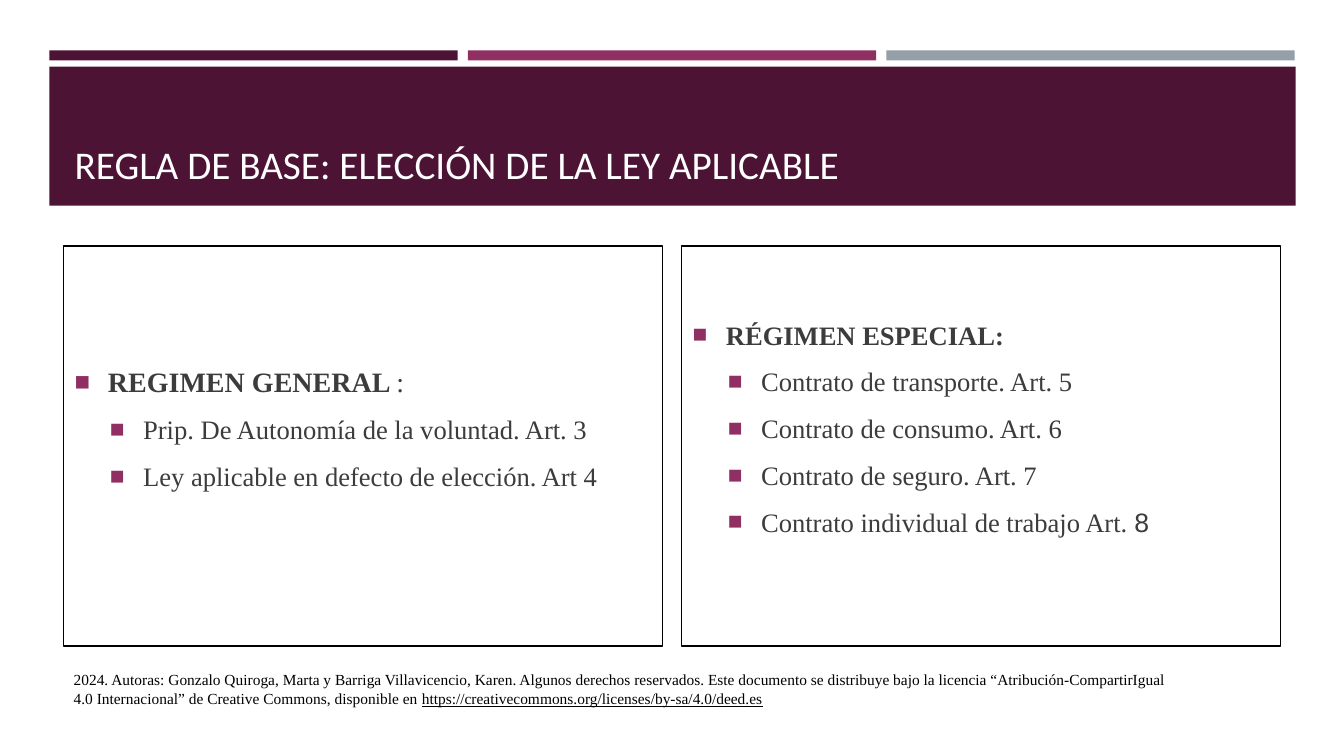
from dataclasses import dataclass

import pptx
import pptx.dml.color
import pptx.enum.shapes
import pptx.enum.text
import pptx.oxml
import pptx.oxml.ns
import pptx.util
from pptx.util import Inches

RGBColor = pptx.dml.color.RGBColor
RECTANGLE = pptx.enum.shapes.MSO_SHAPE.RECTANGLE
PLUM = RGBColor(0x4D, 0x13, 0x34)
MAGENTA = RGBColor(0x90, 0x30, 0x62)
GREY = RGBColor(0x95, 0x9F, 0xA7)
DARK = RGBColor(0x3C, 0x3C, 0x3C)
BLACK = RGBColor(0, 0, 0)
WHITE = RGBColor(0xFF, 0xFF, 0xFF)
SERIF = "Times New Roman"


@dataclass
class Span:
    text: str
    size: float
    color: RGBColor = DARK
    font: str = SERIF
    bold: bool = False
    underline: bool = False


@dataclass
class Panel:
    left: float
    top_inset: float
    heading: list[Span]
    items: list[list[Span]]


PANELS = [
    Panel(0.63, 1.18,
          [Span("REGIMEN GENERAL ", 20, bold=True), Span(":", 20)],
          [[Span("Prip. De Autonomía de la voluntad. Art. 3", 19)],
           [Span("Ley aplicable en defecto de elección. Art 4", 19)]]),
    Panel(6.76, 0.72,
          [Span("RÉGIMEN ESPECIAL:", 19, bold=True)],
          [[Span("Contrato de transporte. Art. 5", 19)],
           [Span("Contrato de consumo. Art. 6", 19)],
           [Span("Contrato de seguro. Art. 7", 19)],
           [Span("Contrato individual de trabajo Art. ", 19), Span("8", 19, font="Arial")]]),
]
FOOTER = [
    Span("2024. Autoras: Gonzalo Quiroga, Marta y Barriga Villavicencio, Karen. "
         "Algunos derechos reservados. Este documento se distribuye bajo la licencia "
         "“Atribución-CompartirIgual 4.0 Internacional” de Creative Commons, disponible en ",
         11, BLACK),
    Span("https://creativecommons.org/licenses/by-sa/4.0/deed.es", 11, BLACK, underline=True),
]


def prepare_frame(shape, left: float = 0, top: float = 0):
    frame = shape.text_frame
    frame.word_wrap = True
    frame.auto_size = pptx.enum.text.MSO_AUTO_SIZE.NONE
    frame.vertical_anchor = pptx.enum.text.MSO_ANCHOR.TOP
    frame.margin_left, frame.margin_top = Inches(left), Inches(top)
    frame.margin_right = frame.margin_bottom = 0
    return frame


def write_spans(paragraph, spans: list[Span]) -> None:
    paragraph.alignment = pptx.enum.text.PP_ALIGN.LEFT
    for span in spans:
        run = paragraph.add_run()
        run.text = span.text
        run.font.name = span.font
        run.font.size = pptx.util.Pt(span.size)
        run.font.bold = span.bold
        run.font.underline = span.underline
        run.font.color.rgb = span.color


def add_bullet(paragraph, margin: float) -> None:
    properties = paragraph._p.get_or_add_pPr()
    properties.set("marL", str(Inches(margin)))
    properties.set("indent", str(Inches(-0.33)))
    namespace = pptx.oxml.ns.nsdecls("a")
    for xml in (
        f'<a:buClr {namespace}><a:srgbClr val="{MAGENTA}"/></a:buClr>',
        f'<a:buSzPct {namespace} val="92000"/>',
        f'<a:buFont {namespace} typeface="Arial"/>',
        f'<a:buChar {namespace} char="■"/>',
    ):
        properties.append(pptx.oxml.parse_xml(xml))


def add_bar(slide, left: float, color: RGBColor) -> None:
    bar = slide.shapes.add_shape(RECTANGLE, Inches(left), Inches(0.5), Inches(4.05), Inches(0.1))
    bar.shadow.inherit = False
    bar.fill.solid()
    bar.fill.fore_color.rgb = color
    bar.line.fill.background()


def add_title(slide) -> None:
    title = slide.shapes.title
    title.left, title.top = Inches(0.49), Inches(0.66)
    title.width, title.height = Inches(12.36), Inches(1.38)
    title.fill.solid()
    title.fill.fore_color.rgb = PLUM
    frame = prepare_frame(title, 0.25, 0.73)
    write_spans(frame.paragraphs[0],
                [Span("REGLA DE BASE: ELECCIÓN DE LA LEY APLICABLE", 28, WHITE, "Calibri")])


def add_panel(slide, panel: Panel) -> None:
    box = slide.shapes.add_shape(
        RECTANGLE, Inches(panel.left), Inches(2.44), Inches(5.94), Inches(3.97))
    box.shadow.inherit = False
    box.fill.background()
    box.line.color.rgb = BLACK
    box.line.width = pptx.util.Pt(1)
    frame = prepare_frame(box, top=panel.top_inset)
    heading = frame.paragraphs[0]
    write_spans(heading, panel.heading)
    add_bullet(heading, 0.44)
    for item in panel.items:
        paragraph = frame.add_paragraph()
        paragraph.level = 1
        paragraph.space_before = pptx.util.Pt(10.6)
        write_spans(paragraph, item)
        add_bullet(paragraph, 0.79)


def add_footer(slide) -> None:
    footer = slide.shapes.add_textbox(Inches(0.72), Inches(6.65), Inches(11.05), Inches(0.5))
    paragraph = prepare_frame(footer, 0.01).paragraphs[0]
    paragraph.line_spacing = pptx.util.Pt(13.2)
    write_spans(paragraph, FOOTER)


def main() -> None:
    presentation = pptx.Presentation()
    presentation.slide_width, presentation.slide_height = Inches(13.33), Inches(7.5)
    slide = presentation.slides.add_slide(presentation.slide_layouts[5])
    for index, color in enumerate((PLUM, MAGENTA, GREY)):
        add_bar(slide, 0.49 + 4.15 * index, color)
    add_title(slide)
    add_footer(slide)
    for panel in PANELS:
        add_panel(slide, panel)
    presentation.save("out.pptx")


if __name__ == "__main__":
    main()
